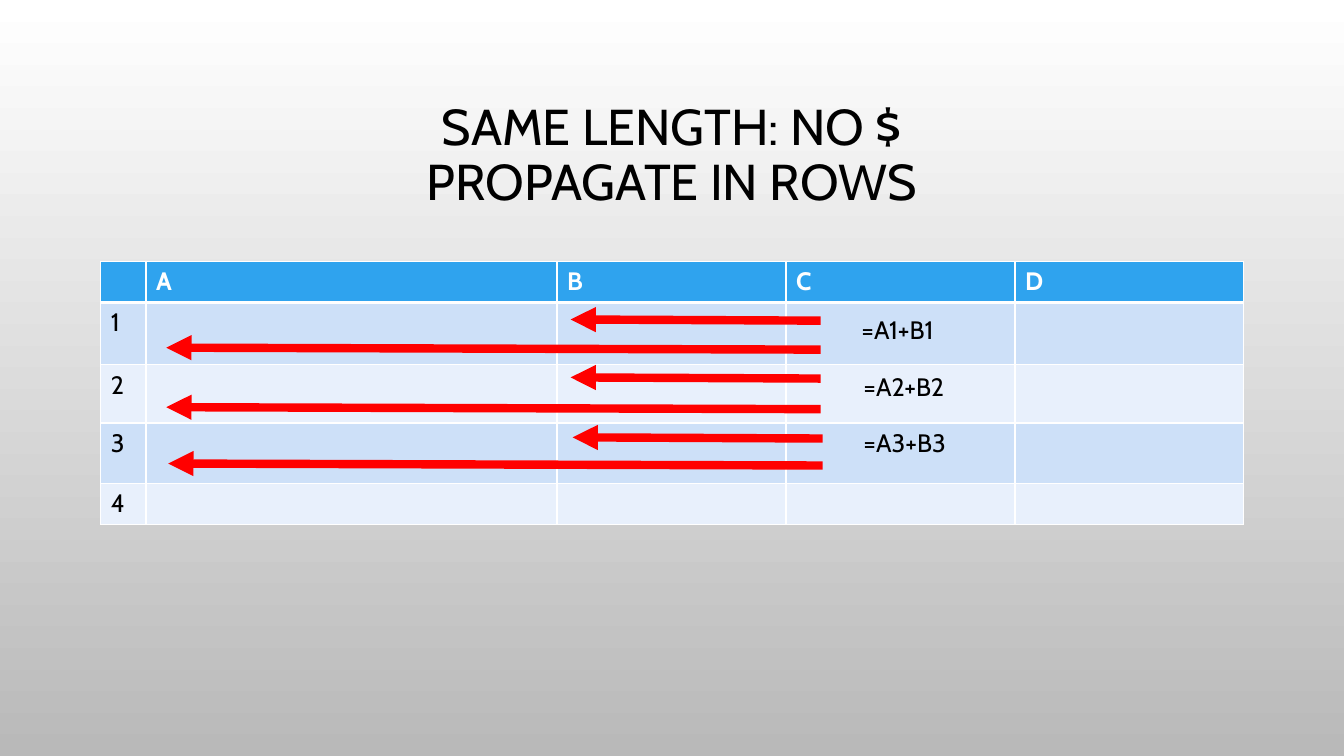
from dataclasses import dataclass
from itertools import product

from lxml import etree
from pptx import Presentation
from pptx.dml.color import RGBColor
from pptx.enum.shapes import MSO_CONNECTOR
from pptx.enum.text import MSO_ANCHOR, MSO_AUTO_SIZE, PP_ALIGN
from pptx.oxml.ns import qn
from pptx.util import Cm, Pt

STRAIGHT = MSO_CONNECTOR.STRAIGHT
MIDDLE = MSO_ANCHOR.MIDDLE
NO_FIT = MSO_AUTO_SIZE.NONE
GROW = MSO_AUTO_SIZE.SHAPE_TO_FIT_TEXT
CENTER = PP_ALIGN.CENTER

FONT = "Cabin"
BLACK, WHITE, RED = "000000", "FFFFFF", "FF0000"
HEADER, BANDS = "2FA3EE", ("E8F0FC", "CDE0F8")
COLUMN_WIDTHS = (1.14, 10.36, 5.77, 5.77, 5.77)
ROW_HEIGHTS = (1.04, 1.57, 1.47, 1.52, 1.04)
COLUMN_NAMES = ("", "A", "B", "C", "D")
ARROW_START, B_TIP, A_TIP = 20.68, 14.38, 4.19


@dataclass
class Formula:
    text: str
    left: float
    top: float
    shift: float
    to_b: tuple[float, float]
    to_a: tuple[float, float]


FORMULAS = (
    Formula("=A1+B1", 21.46, 7.8, 0, (8.08, 8.05), (8.81, 8.76)),
    Formula("=A2+B2", 21.51, 9.22, 0, (9.54, 9.51), (10.31, 10.26)),
    Formula("=A3+B3", 21.51, 10.64, 0.05, (11.05, 11.02), (11.73, 11.68)),
)


def rgb(color: str) -> RGBColor:
    return RGBColor.from_string(color)


def write(tf, text: str, *, size: float = 18, color: str = BLACK,
          bold: bool = False, align=None, spacing: float | None = None) -> None:
    p = tf.paragraphs[0]
    p.alignment = align
    p.line_spacing = spacing
    for i, line in enumerate(text.split("\n")):
        if i:
            p.add_line_break()
        r = p.add_run()
        r.text = line
        r.font.name = FONT
        r.font.size = Pt(size)
        r.font.bold = bold
        r.font.color.rgb = rgb(color)


def set_border(cell, side: str, width: float) -> None:
    ln = etree.SubElement(cell._tc.get_or_add_tcPr(), qn(f"a:ln{side}"), w=str(Pt(width)))
    fill = etree.SubElement(ln, qn("a:solidFill"))
    etree.SubElement(fill, qn("a:srgbClr"), val=WHITE)


def add_sheet(s) -> None:
    rows, cols = len(ROW_HEIGHTS), len(COLUMN_WIDTHS)
    table = s.shapes.add_table(rows, cols, Cm(2.54), Cm(6.58),
                               Cm(sum(COLUMN_WIDTHS)), Cm(sum(ROW_HEIGHTS))).table
    for column, width in zip(table.columns, COLUMN_WIDTHS):
        column.width = Cm(width)
    for row, height in zip(table.rows, ROW_HEIGHTS):
        row.height = Cm(height)
    for i, j in product(range(rows), range(cols)):
        cell = table.cell(i, j)
        header = i == 0
        thick_sides = {0: "B", 1: "T"}.get(i, "")
        for side in "LRTB":
            set_border(cell, side, 3 if side in thick_sides else 1)
        cell.fill.solid()
        cell.fill.fore_color.rgb = rgb(HEADER if header else BANDS[i % 2])
        text = COLUMN_NAMES[j] if header else str(i) if j == 0 else ""
        if text:
            write(cell.text_frame, text, color=WHITE if header else BLACK, bold=header)


def add_arrow(s, x1: float, y1: float, x2: float, y2: float) -> None:
    c = s.shapes.add_connector(STRAIGHT, Cm(x1), Cm(y1), Cm(x2), Cm(y2))
    c.line.color.rgb = rgb(RED)
    c.line.width = Pt(6)
    etree.SubElement(c.line._get_or_add_ln(), qn("a:tailEnd"), type="triangle")
    etree.SubElement(c._element.spPr, qn("a:effectLst"))


def add_formula(s, formula: Formula) -> None:
    for tip, (y1, y2) in ((B_TIP, formula.to_b), (A_TIP, formula.to_a)):
        add_arrow(s, ARROW_START + formula.shift, y1, tip + formula.shift, y2)
    tf = s.shapes.add_textbox(Cm(formula.left), Cm(formula.top), Cm(2.77), Cm(1.02)).text_frame
    tf.word_wrap = False
    tf.auto_size = GROW
    write(tf, formula.text)


def add_title(s, text: str) -> None:
    sp = s.shapes.title
    sp.left, sp.top, sp.width, sp.height = Cm(2.54), Cm(1.73), Cm(28.78), Cm(4.44)
    tf = sp.text_frame
    tf.auto_size = NO_FIT
    tf.vertical_anchor = MIDDLE
    write(tf, text, size=36, align=CENTER, spacing=0.9)


def set_background(s) -> None:
    fill = s.background.fill
    fill.gradient()
    fill.gradient_angle = 270
    for stop, color, position in zip(fill.gradient_stops, (WHITE, "B9B9B9"), (0, 1)):
        stop.color.rgb = rgb(color)
        stop.position = position


def main() -> None:
    prs = Presentation()
    prs.slide_width, prs.slide_height = Cm(33.87), Cm(19.05)
    s = prs.slides.add_slide(prs.slide_layouts[5])
    set_background(s)
    add_title(s, "SAME LENGTH: NO $\nPROPAGATE IN ROWS")
    add_sheet(s)
    for formula in FORMULAS:
        add_formula(s, formula)
    prs.save("out.pptx")


if __name__ == "__main__":
    main()
